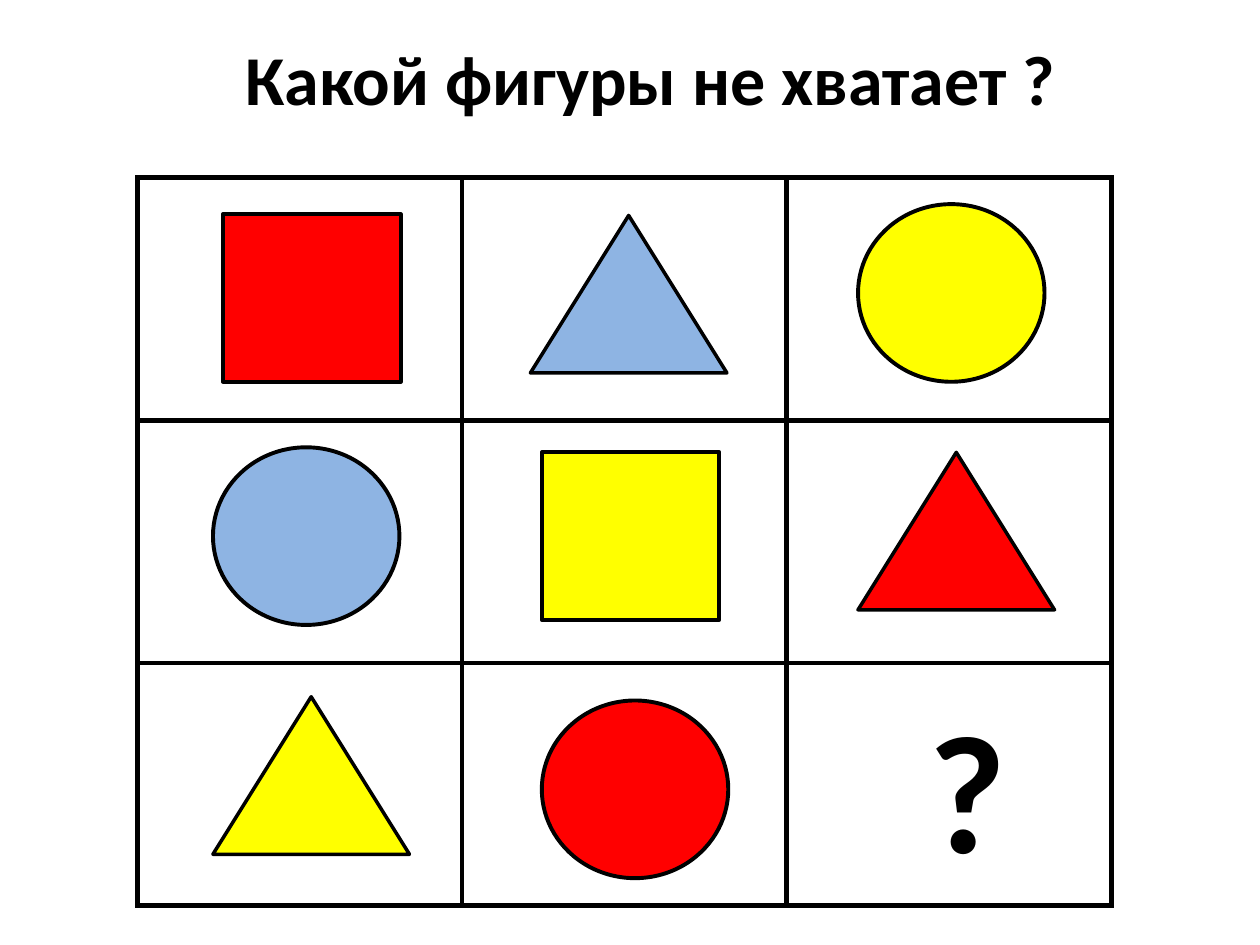
from lxml.etree import SubElement
from pptx import Presentation
from pptx.dml.color import RGBColor
from pptx.enum.shapes import MSO_SHAPE
from pptx.enum.text import MSO_ANCHOR, MSO_AUTO_SIZE, PP_ALIGN
from pptx.oxml.ns import qn
from pptx.util import Inches, Pt

COLORS = {"black": "000000", "red": "FF0000", "yellow": "FFFF00", "blue": "8EB4E3"}
FONT = "Calibri"
QUESTION = "Какой фигуры не хватает ?"
MISSING = "?"

FIGURE_KINDS = {
    "square": (MSO_SHAPE.RECTANGLE, 1.41, 1.33, 2.25),
    "triangle": (MSO_SHAPE.ISOSCELES_TRIANGLE, 1.56, 1.25, 2),
    "circle": (MSO_SHAPE.OVAL, 1.48, 1.41, 2.25),
}
PUZZLE = [
    [("square", "red", 1.77, 1.7), ("triangle", "blue", 4.21, 1.71), ("circle", "yellow", 6.81, 1.62)],
    [("circle", "blue", 1.69, 3.55), ("square", "yellow", 4.3, 3.59), ("triangle", "red", 6.81, 3.59)],
    [("triangle", "yellow", 1.69, 5.53), ("circle", "red", 4.3, 5.56)],
]
GRID_SIZE = 3
GRID_BOX = (1.09, 1.41, 7.73, 5.78)
GRID_LINE = 3


def rgb(name):
    return RGBColor.from_string(COLORS[name])


def write(holder, text, size, align=PP_ALIGN.LEFT, wrap=True):
    frame = holder.text_frame
    frame.word_wrap = wrap
    frame.auto_size = MSO_AUTO_SIZE.SHAPE_TO_FIT_TEXT
    frame.vertical_anchor = MSO_ANCHOR.TOP
    paragraph = frame.paragraphs[0]
    paragraph.alignment = align
    run = paragraph.add_run()
    run.text = text
    run.font.name = FONT
    run.font.size = Pt(size)
    run.font.bold = True
    run.font.color.rgb = rgb("black")


def border(cell):
    properties = cell._tc.get_or_add_tcPr()
    for side in ("a:lnL", "a:lnR", "a:lnT", "a:lnB"):
        line = SubElement(properties, qn(side), w=str(Pt(GRID_LINE)))
        solid = SubElement(line, qn("a:solidFill"))
        SubElement(solid, qn("a:srgbClr"), val=COLORS["black"])
    cell.fill.background()


def add_grid(slide):
    grid = slide.shapes.add_table(GRID_SIZE, GRID_SIZE, *map(Inches, GRID_BOX)).table
    grid.first_row = False
    grid.horz_banding = False
    for cell in grid.iter_cells():
        border(cell)


def add_figure(slide, kind, color, left, top):
    preset, width, height, line_width = FIGURE_KINDS[kind]
    figure = slide.shapes.add_shape(preset, *map(Inches, (left, top, width, height)))
    figure.shadow.inherit = False
    figure.fill.solid()
    figure.fill.fore_color.rgb = rgb(color)
    figure.line.color.rgb = rgb("black")
    figure.line.width = Pt(line_width)


def main():
    deck = Presentation()
    deck.slide_width, deck.slide_height = Inches(10), Inches(7.5)
    slide = deck.slides.add_slide(deck.slide_layouts[5])

    question = slide.shapes.title
    question.left, question.top = Inches(0.47), Inches(0.23)
    question.width, question.height = Inches(9.38), Inches(0.77)
    write(question, QUESTION, 40, align=PP_ALIGN.CENTER)

    add_grid(slide)
    for row in PUZZLE:
        for figure in row:
            add_figure(slide, *figure)

    missing = slide.shapes.add_textbox(*map(Inches, (7.27, 5.39, 0.83, 1.72)))
    write(missing, MISSING, 96, wrap=False)

    deck.save("out.pptx")


if __name__ == "__main__":
    main()
